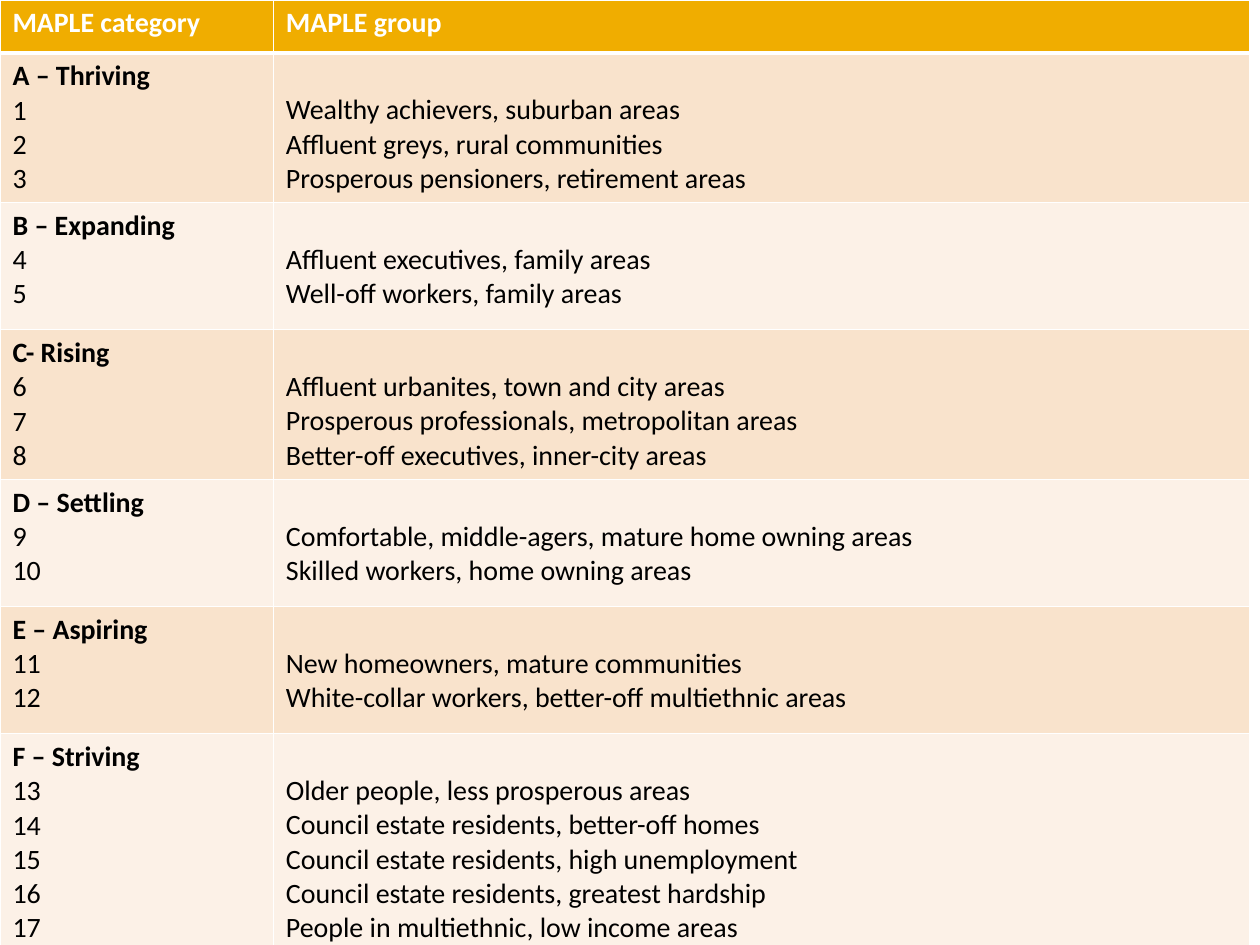
from lxml import etree
from pptx import Presentation
from pptx.dml.color import RGBColor
from pptx.oxml.ns import qn
from pptx.util import Inches, Pt

BLANK_LAYOUT = 6
COLORS = {"header": "F0AD00", "odd": "F9E3CC", "even": "FCF1E7",
          "line": "FFFFFF", "text": "000000"}
COLUMN_WIDTHS = (2.17, 7.75)
HEADER_HEIGHT, BODY_HEIGHT = 0.42, 1.01
TABLE_HEIGHT = 7.49
MARGIN, TEXT_LINE = 0.05, 0.27

HEADINGS = ("MAPLE category", "MAPLE group")
CATEGORIES = {
    "A – Thriving": ["Wealthy achievers, suburban areas",
                     "Affluent greys, rural communities",
                     "Prosperous pensioners, retirement areas"],
    "B – Expanding": ["Affluent executives, family areas",
                      "Well-off workers, family areas"],
    "C- Rising": ["Affluent urbanites, town and city areas",
                  "Prosperous professionals, metropolitan areas",
                  "Better-off executives, inner-city areas"],
    "D – Settling": ["Comfortable, middle-agers, mature home owning areas",
                     "Skilled workers, home owning areas"],
    "E – Aspiring": ["New homeowners, mature communities",
                     "White-collar workers, better-off multiethnic areas"],
    "F – Striving": ["Older people, less prosperous areas",
                     "Council estate residents, better-off homes",
                     "Council estate residents, high unemployment",
                     "Council estate residents, greatest hardship",
                     "People in multiethnic, low income areas"],
}


def write_cell(cell, lines, fill, color="text", bold_lines=0, top=MARGIN):
    """Write one paragraph per line; the first bold_lines of them are bold."""
    cell.fill.solid()
    cell.fill.fore_color.rgb = RGBColor.from_string(COLORS[fill])
    cell.margin_top = Inches(top)
    cell.text = "\n".join(lines)
    for index, para in enumerate(cell.text_frame.paragraphs):
        font = para.runs[0].font
        font.name, font.size = "Calibri", Pt(16)
        font.bold = index < bold_lines
        font.color.rgb = RGBColor.from_string(COLORS[color])


def add_borders(cell, bottom=1):
    properties = cell._tc.get_or_add_tcPr()
    for side, width in (("L", 1), ("R", 1), ("T", 1), ("B", bottom)):
        line = etree.SubElement(properties, qn(f"a:ln{side}"), w=str(Pt(width)))
        solid = etree.SubElement(line, qn("a:solidFill"))
        etree.SubElement(solid, qn("a:srgbClr"), val=COLORS["line"])


deck = Presentation()
deck.slide_width, deck.slide_height = Inches(10), Inches(7.5)
page = deck.slides.add_slide(deck.slide_layouts[BLANK_LAYOUT])

frame = page.shapes.add_table(len(CATEGORIES) + 1, len(HEADINGS), 0, 0,
                              Inches(sum(COLUMN_WIDTHS)), Inches(TABLE_HEIGHT))
table = frame.table
for column, width in zip(table.columns, COLUMN_WIDTHS):
    column.width = Inches(width)
for index, row in enumerate(table.rows):
    row.height = Inches(BODY_HEIGHT if index else HEADER_HEIGHT)
    for cell in row.cells:
        add_borders(cell, bottom=1 if index else 3)
frame.height = Inches(TABLE_HEIGHT)

for column, heading in enumerate(HEADINGS):
    write_cell(table.cell(0, column), [heading], "header", color="line", bold_lines=1)

number = 1
for row, (category, groups) in enumerate(CATEGORIES.items(), start=1):
    fill = "odd" if row % 2 else "even"
    numbers = [str(number + offset) for offset in range(len(groups))]
    number += len(groups)
    write_cell(table.cell(row, 0), [category] + numbers, fill, bold_lines=1)
    # The groups start one line down, level with their numbers.
    write_cell(table.cell(row, 1), groups, fill, top=MARGIN + TEXT_LINE)

deck.save("out.pptx")
